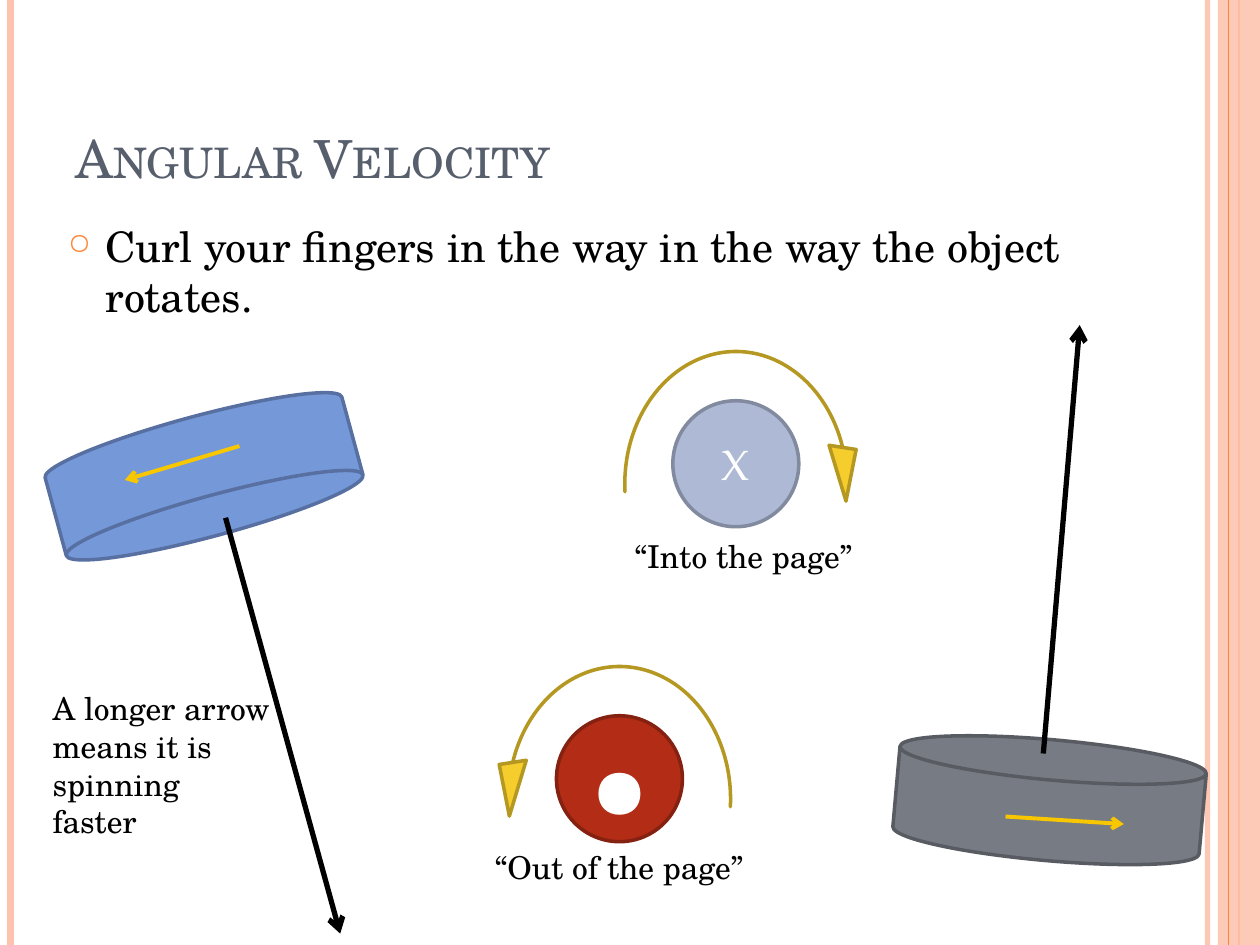
from dataclasses import dataclass

from pptx import Presentation
from pptx import util as u
from pptx.dml.color import RGBColor
from pptx.enum import shapes, text
from pptx.oxml import ns, xmlchemy

SHAPE = shapes.MSO_SHAPE


@dataclass(frozen=True)
class Theme:
    serif: str = "TeX Gyre Schola"
    symbol: str = "TeX Gyre Pagella"
    title_size: float = 30
    body_size: float = 24
    note_size: float = 18
    dot_size: float = 60
    title: str = "575F6D"
    ink: str = "000000"
    white: str = "FFFFFF"
    accent: str = "FE8637"
    pale: str = "FEC3AE"
    spin: str = "F8C700"
    arc: tuple = ("F5CD2D", "B59821")
    blue: tuple = ("7598D9", "5770A1")
    grey: tuple = ("777C84", "585C62")
    red: tuple = ("B32C16", "842110")
    lilac: tuple = ("AEBAD5", "818A9E")


THEME = Theme()


def points(*values):
    return [u.Pt(v) for v in values]


def add_child(parent, tag, **attributes):
    child = xmlchemy.OxmlElement(tag)
    for name, value in attributes.items():
        child.set(name, str(value))
    parent.append(child)
    return child


def set_opacity(part, percent):
    for color in part.element.spPr.iter(ns.qn("a:srgbClr")):
        add_child(color, "a:alpha", val=percent * 1000)


def set_font(paragraph, face, size, color):
    paragraph.font.name = face
    paragraph.font.size = u.Pt(size)
    paragraph.font.color.rgb = RGBColor.from_string(color)


def add_line(parent, start, end, color, width, arrow=False):
    line = parent.add_connector(shapes.MSO_CONNECTOR.STRAIGHT,
                                *points(*start, *end))
    line.line.color.rgb = RGBColor.from_string(color)
    line.line.width = u.Pt(width)
    if arrow:
        add_child(line.line._get_or_add_ln(), "a:tailEnd", type="arrow")
    add_child(line.element.spPr, "a:effectLst")
    return line


def add_solid(parent, kind, box, fill, outline=None):
    solid = parent.add_shape(kind, *points(*box))
    solid.shadow.inherit = False
    solid.fill.solid()
    solid.fill.fore_color.rgb = RGBColor.from_string(fill)
    if outline:
        solid.line.color.rgb = RGBColor.from_string(outline)
        solid.line.width = u.Pt(2)
    else:
        solid.line.fill.background()
    return solid


def add_text(parent, box, wording, size, color=THEME.ink, wrap=True, grow=False):
    frame = parent.add_textbox(*points(*box)).text_frame
    frame.word_wrap = wrap
    if grow:
        frame.auto_size = text.MSO_AUTO_SIZE.SHAPE_TO_FIT_TEXT
    paragraph = frame.paragraphs[0]
    paragraph.text = wording
    set_font(paragraph, THEME.serif, size, color)
    return frame


def add_side_rails(parent):
    def rail(x, color, width):
        return add_line(parent, (x, 0), (x, 540), color, width)

    set_opacity(rail(690, THEME.pale, 3), 93)
    rail(6, THEME.pale, 4.5)
    rail(708, THEME.accent, 1.5)
    band = add_solid(parent, SHAPE.RECTANGLE, (696, 0, 24, 540), THEME.pale)
    set_opacity(band, 87)
    rail(702, THEME.accent, 0.75)


def add_title(parent, wording):
    frame = add_text(parent, (36, 21.6, 588, 90), wording,
                     THEME.title_size, THEME.title)
    frame.vertical_anchor = text.MSO_ANCHOR.BOTTOM
    frame.paragraphs[0].runs[0].font._element.set("cap", "small")


def add_bullet(parent, wording):
    frame = add_text(parent, (31.7, 122.4, 588, 384), wording, THEME.body_size)
    paragraph = frame.paragraphs[0]
    paragraph.space_before = u.Pt(6)
    properties = paragraph._p.get_or_add_pPr()
    properties.set("marL", str(u.Pt(21.6)))
    properties.set("indent", str(u.Pt(-21.6)))
    # Bullet settings precede the default run properties
    bullet_color = xmlchemy.OxmlElement("a:buClr")
    add_child(bullet_color, "a:srgbClr", val=THEME.accent)
    bullet_size = xmlchemy.OxmlElement("a:buSzPct")
    bullet_size.set("val", "70000")
    bullet_char = xmlchemy.OxmlElement("a:buChar")
    bullet_char.set("char", "○")
    defaults = properties.find(ns.qn("a:defRPr"))
    for setting in (bullet_color, bullet_size, bullet_char):
        defaults.addprevious(setting)


def add_wheel(parent, center, angle, colors, axis, spin):
    """Tilted wheel with its velocity vector and rim direction."""
    wheel = parent.add_group_shape().shapes
    width, height = 69.1, 175.7
    x, y = center
    drum = add_solid(wheel, SHAPE.FLOWCHART_DIRECT_ACCESS_STORAGE,
                     (x - width / 2, y - height / 2, width, height), *colors)
    drum.rotation = angle
    add_line(wheel, *axis, THEME.ink, 3, arrow=True)
    add_line(wheel, *spin, THEME.spin, 2.25, arrow=True)


def add_spin_sign(parent, center, colors, mark, mark_size, mirrored=False):
    """Disc seen along its axis, under a curved arrow."""
    sign = parent.add_group_shape().shapes
    x, y = center
    disc = add_solid(sign, SHAPE.OVAL, (x - 36, y - 36, 72, 72), *colors)
    disc.text_frame.vertical_anchor = text.MSO_ANCHOR.MIDDLE
    paragraph = disc.text_frame.paragraphs[0]
    paragraph.text = mark
    paragraph.alignment = text.PP_ALIGN.CENTER
    set_font(paragraph, THEME.symbol, mark_size, THEME.white)

    arc = add_solid(sign, SHAPE.CIRCULAR_ARROW,
                    (x - 71.3, y - 72, 142.6, 167), *THEME.arc)
    for index, value in enumerate((0, 16.66, 204.68, 105.56, 0.055)):
        arc.adjustments[index] = value
    if mirrored:
        arc.element.spPr.get_or_add_xfrm().set("flipH", "1")


def main():
    deck = Presentation()
    deck.slide_width, deck.slide_height = points(720, 540)
    parts = deck.slides.add_slide(deck.slide_layouts[6]).shapes

    # Frame and wording
    add_side_rails(parts)
    add_title(parts, "Angular Velocity")
    add_bullet(parts, "Curl your fingers in the way in the way the object rotates.")

    # Wheels seen from the side
    add_wheel(parts, (599.8, 457.2), 275.1, THEME.grey,
              axis=((596.2, 430.6), (617, 185.8)),
              spin=((574.6, 466.6), (642.2, 470.9)))
    add_wheel(parts, (116.6, 272.2), 74.8, THEME.blue,
              axis=((128.9, 295.9), (194.4, 533.5)),
              spin=((136.8, 254.9), (71.3, 274.3)))

    # Wheels seen along the axis
    add_spin_sign(parts, (354, 445), THEME.red, "•", THEME.dot_size, mirrored=True)
    add_spin_sign(parts, (420.5, 265), THEME.lilac, "X", THEME.body_size)

    # Captions
    for box, wording, wrap in (
        ((355.7, 303.1, 140.4, 29), "“Into the page”", False),
        ((275.8, 481, 157.7, 29), "“Out of the page”", False),
        ((23, 390.2, 139, 94.3), "A longer arrow means it is spinning faster", True),
    ):
        add_text(parts, box, wording, THEME.note_size, wrap=wrap, grow=True)

    deck.save("out.pptx")


if __name__ == "__main__":
    main()
